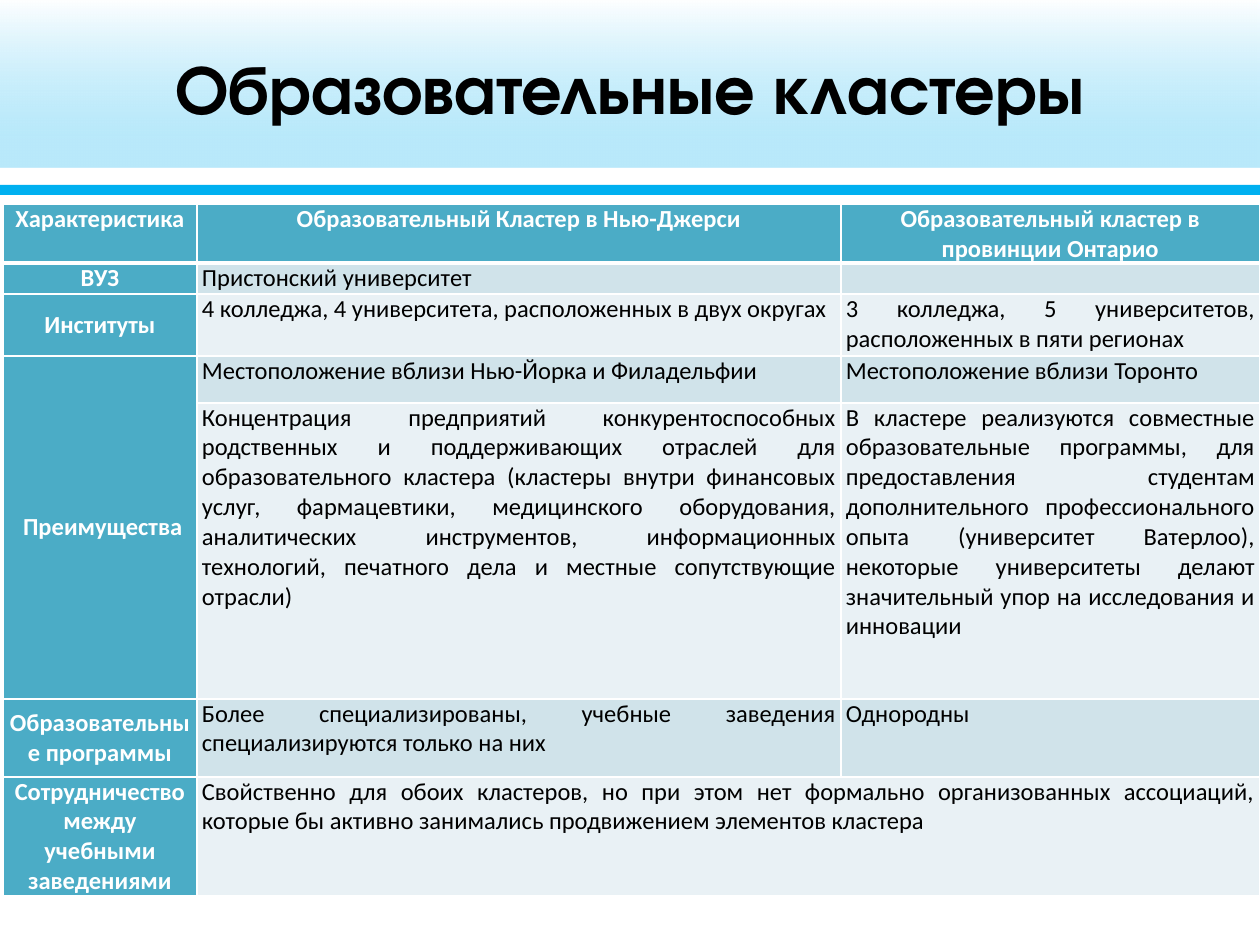
"""Build the slide comparing two educational clusters in a table."""
from lxml import etree
from pptx import Presentation
from pptx import util as u
from pptx.dml.color import RGBColor
from pptx.enum import shapes, text
from pptx.oxml.ns import qn

PX = 914400 // 126
WHITE, BLACK, TEAL, SKY = "FFFFFF", "000000", "4BACC6", "00B0F0"
BANDS = ["D0E3EA", "E9F1F5"]


def rgb(value):
    return RGBColor.from_string(value)


def border(cell, side, width):
    ln = etree.SubElement(cell._tc.get_or_add_tcPr(), qn(f"a:ln{side}"), w=str(u.Pt(width)))
    fill = etree.SubElement(ln, qn("a:solidFill"))
    etree.SubElement(fill, qn("a:srgbClr"), val=WHITE)


prs = Presentation()
prs.slide_width, prs.slide_height = u.Inches(10), u.Inches(7.5)
s = prs.slides.add_slide(prs.slide_layouts[6])

bands = [
    ((-3, -1, 1260, 168), [(0, WHITE, 80), (1, WHITE, 23)]),
    ((0, 185, 1275, 10), None),
    ((0, 0, 1275, 168), [(0, WHITE, 46), (0.84, SKY, 27)]),
]
for box, stops in bands:
    sp = s.shapes.add_shape(shapes.MSO_SHAPE.RECTANGLE, *[v * PX for v in box])
    sp.shadow.inherit = False
    sp.line.fill.background()
    if stops is None:
        sp.fill.solid()
        sp.fill.fore_color.rgb = rgb(SKY)
        continue
    sp.fill.gradient()
    sp.fill.gradient_angle = 270
    for stop, (position, color, opacity) in zip(sp.fill.gradient_stops, stops):
        stop.position = position
        stop.color.rgb = rgb(color)
        clr = stop._gs.find(qn("a:srgbClr"))
        etree.SubElement(clr, qn("a:alpha"), val=str(opacity * 1000))

sp = s.shapes.add_textbox(63 * PX, 8 * PX, 1134 * PX, 158 * PX)
tf = sp.text_frame
tf.word_wrap = True
tf.vertical_anchor = text.MSO_ANCHOR.MIDDLE
p = tf.paragraphs[0]
p.text = "Образовательные кластеры"
p.alignment = text.PP_ALIGN.CENTER
r = p.runs[0]
r.font.name, r.font.size, r.font.bold = "TeX Gyre Adventor", u.Pt(39.6), True
r.font.color.rgb = rgb(BLACK)

rows = [
    ("Характеристика", "Образовательный Кластер в Нью-Джерси",
     "Образовательный кластер в провинции Онтарио"),
    ("ВУЗ", "Пристонский университет", ""),
    ("Институты", "4 колледжа, 4 университета, расположенных в двух округах",
     "3 колледжа, 5 университетов, расположенных в пяти регионах"),
    (" Преимущества", "Местоположение вблизи Нью-Йорка и Филадельфии",
     "Местоположение вблизи Торонто"),
    ("", "Концентрация предприятий конкурентоспособных родственных и поддерживающих "
     "отраслей для образовательного кластера (кластеры внутри финансовых услуг, "
     "фармацевтики, медицинского оборудования, аналитических инструментов, "
     "информационных технологий, печатного дела и местные сопутствующие отрасли)",
     "В кластере реализуются совместные образовательные программы, для предоставления "
     "студентам дополнительного профессионального опыта (университет Ватерлоо), "
     "некоторые университеты делают значительный упор на исследования и инновации"),
    ("Образовательные программы",
     "Более специализированы, учебные заведения специализируются только на них", "Однородны"),
    ("Сотрудничество между учебными заведениями",
     "Свойственно для обоих кластеров, но при этом нет формально организованных "
     "ассоциаций, которые бы активно занимались продвижением элементов кластера", ""),
]
widths = [194, 644, 419]
heights = [59, 31, 62, 47, 296, 78, 119]
tbl = s.shapes.add_table(len(rows), len(widths), 3 * PX, 204 * PX,
                         sum(widths) * PX, sum(heights) * PX).table
for column, width in zip(tbl.columns, widths):
    column.width = width * PX
for row, height in zip(tbl.rows, heights):
    row.height = height * PX
tbl.cell(3, 0).merge(tbl.cell(4, 0))
tbl.cell(6, 1).merge(tbl.cell(6, 2))

for i, row in enumerate(rows):
    for j, words in enumerate(row):
        cell = tbl.cell(i, j)
        heading = i == 0 or j == 0
        for side in "LRTB":
            border(cell, side, 3 if (i, side) in [(0, "B"), (1, "T")] else 1)
        cell.fill.solid()
        cell.fill.fore_color.rgb = rgb(TEAL if heading else BANDS[(i - 1) % 2])
        cell.margin_left = cell.margin_right = 5 * PX
        cell.margin_top = cell.margin_bottom = 0
        cell.vertical_anchor = text.MSO_ANCHOR.MIDDLE if i and j == 0 else text.MSO_ANCHOR.TOP
        p = cell.text_frame.paragraphs[0]
        p.alignment = text.PP_ALIGN.CENTER if heading else text.PP_ALIGN.JUSTIFY
        if not words:
            etree.SubElement(p._p, qn("a:endParaRPr"), sz="1400")
            continue
        p.text = words
        r = p.runs[0]
        r.font.name, r.font.size, r.font.bold = "Calibri", u.Pt(14), heading
        r.font.color.rgb = rgb(WHITE if heading else BLACK)

prs.save("out.pptx")
